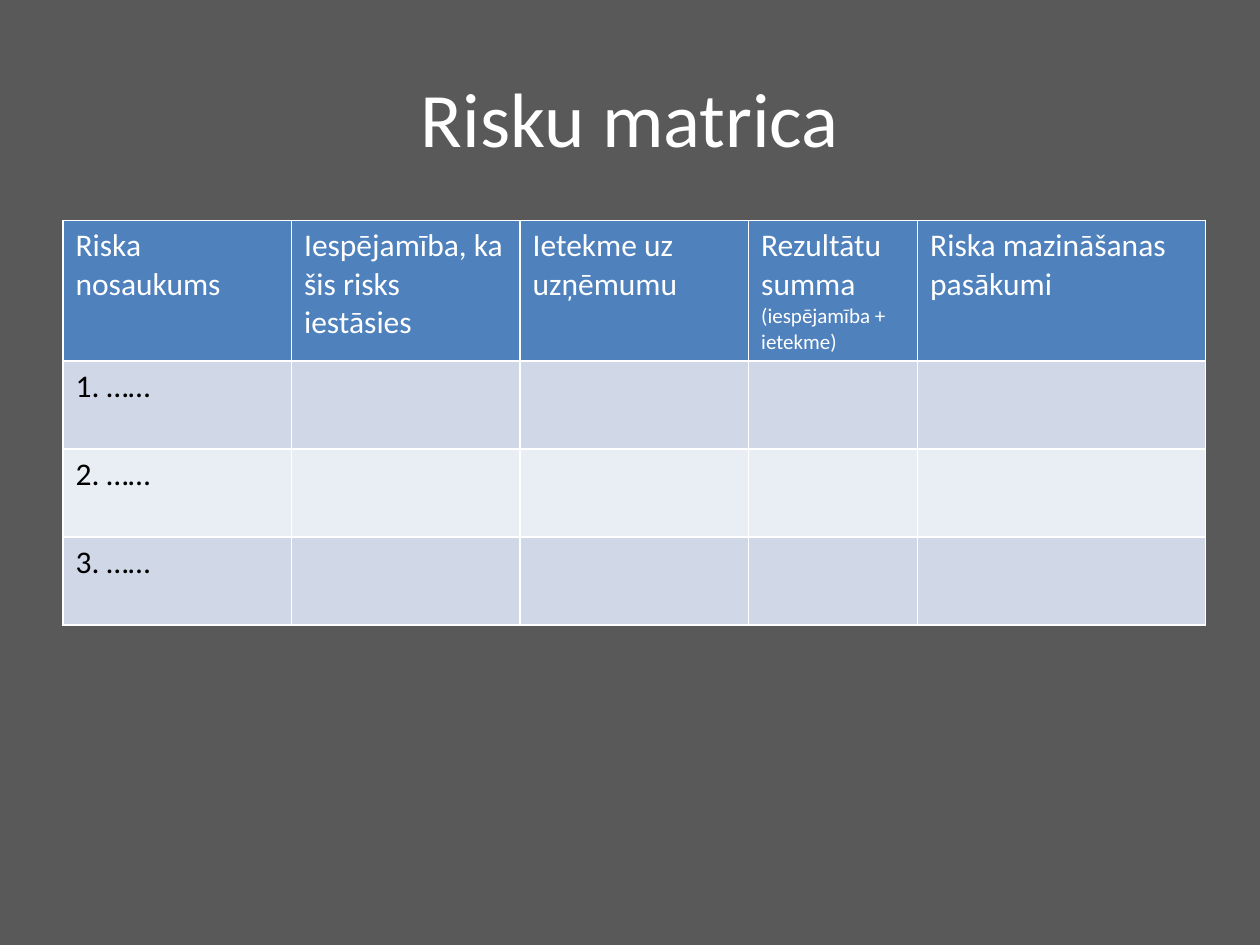
from lxml import etree
from pptx import Presentation
from pptx.dml.color import RGBColor
from pptx.enum.text import MSO_ANCHOR, PP_ALIGN
from pptx.oxml.ns import qn
from pptx.util import Pt

MIDDLE = MSO_ANCHOR.MIDDLE
CENTER = PP_ALIGN.CENTER
TITLE_ONLY = 5

HEADERS = [
    [("Riska nosaukums", 18)],
    [("Iespējamība, ka šis risks iestāsies", 18)],
    [("Ietekme uz uzņēmumu", 18)],
    [("Rezultātu summa ", 18), ("(iespējamība + ietekme)", 12)],
    [("Riska mazināšanas pasākumi", 18)],
]
RISK_COUNT = 3
COLUMN_WIDTHS = [130.6, 130.6, 130.6, 96.6, 164.4]
HEADER_HEIGHT = 79.5
RISK_HEIGHT = 50.3


def color(value):
    return RGBColor.from_string(value)


def add_text(p, text, size=18, fill="000000", font="Calibri", bold=False):
    r = p.add_run()
    r.text = text
    r.font.size = Pt(size)
    r.font.name = font
    r.font.bold = bold
    r.font.color.rgb = color(fill)


class SlideBuilder:
    background = "595959"
    light = "FFFFFF"
    header = "4F81BD"
    bands = ["D0D8E8", "E9EDF4"]

    def __init__(self, prs):
        self.s = prs.slides.add_slide(prs.slide_layouts[TITLE_ONLY])
        fill = self.s.background.fill
        fill.solid()
        fill.fore_color.rgb = color(self.background)

    def title(self, text, left, top, width, height):
        sp = self.s.shapes.title
        sp.left, sp.top, sp.width, sp.height = map(Pt, (left, top, width, height))
        tf = sp.text_frame
        tf.vertical_anchor = MIDDLE
        p = tf.paragraphs[0]
        p.alignment = CENTER
        add_text(p, text, size=44, fill=self.light)

    def cell(self, cell, runs, fill, text_color):
        tc_pr = cell._tc.get_or_add_tcPr()
        for side in ("lnL", "lnR", "lnT", "lnB"):
            ln = etree.SubElement(tc_pr, qn(f"a:{side}"), w=str(Pt(1)))
            solid = etree.SubElement(ln, qn("a:solidFill"))
            etree.SubElement(solid, qn("a:srgbClr"), val=self.light)
        cell.fill.solid()
        cell.fill.fore_color.rgb = color(fill)
        p = cell.text_frame.paragraphs[0]
        for text, size in runs:
            add_text(p, text, size=size, fill=text_color)

    def risk_table(self, left, top):
        width = sum(COLUMN_WIDTHS)
        heights = [HEADER_HEIGHT] + [RISK_HEIGHT] * RISK_COUNT
        table = self.s.shapes.add_table(
            len(heights), len(HEADERS), Pt(left), Pt(top), Pt(width), Pt(sum(heights))
        ).table
        for column, column_width in zip(table.columns, COLUMN_WIDTHS):
            column.width = Pt(column_width)
        for row, height in zip(table.rows, heights):
            row.height = Pt(height)
        for col, runs in enumerate(HEADERS):
            self.cell(table.cell(0, col), runs, self.header, self.light)
        for number in range(1, RISK_COUNT + 1):
            band = self.bands[(number - 1) % 2]
            for col in range(len(HEADERS)):
                runs = [(f"{number}. ……", 18)] if col == 0 else []
                self.cell(table.cell(number, col), runs, band, "000000")


def main():
    prs = Presentation()
    prs.slide_width, prs.slide_height = Pt(720), Pt(540)
    slide = SlideBuilder(prs)
    slide.title("Risku matrica", 36, 21.6, 648, 90)
    slide.risk_table(36, 126)
    prs.save("out.pptx")


if __name__ == "__main__":
    main()
